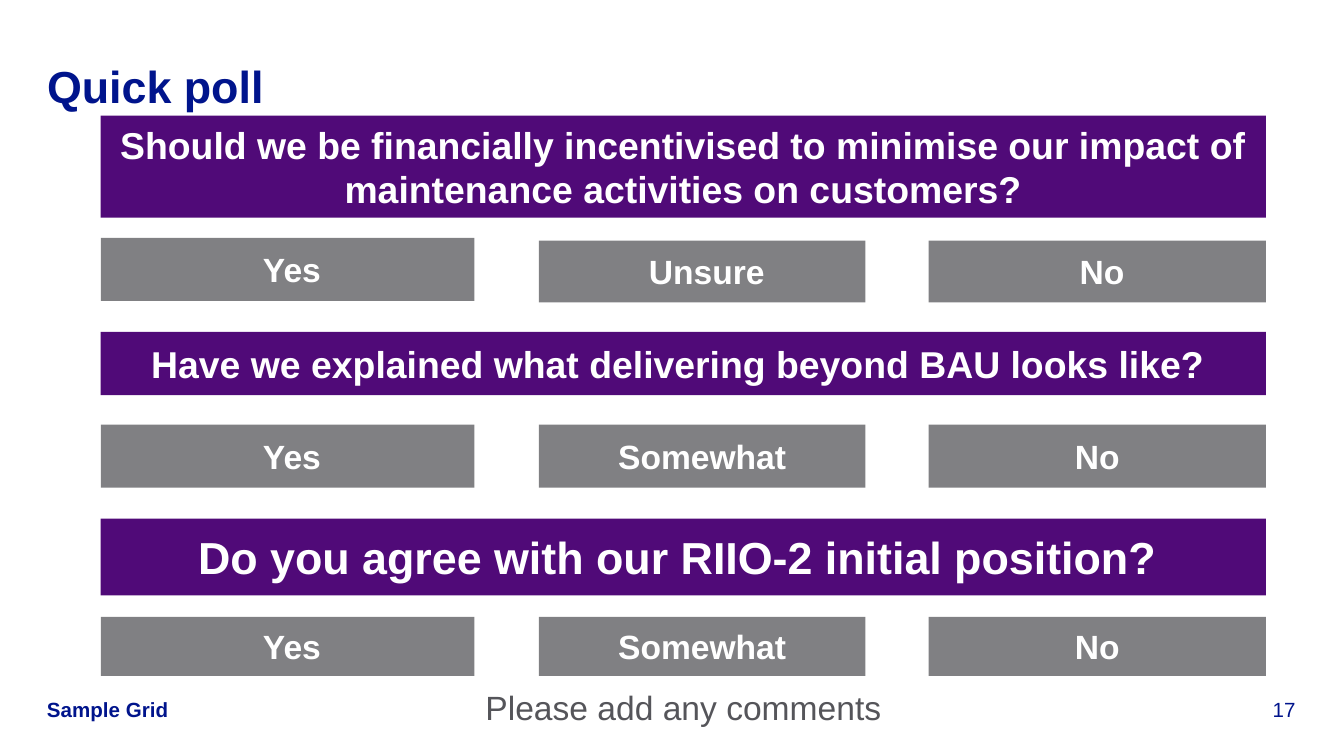
from dataclasses import dataclass

import pptx
import pptx.dml.color
import pptx.enum.shapes
import pptx.enum.text
import pptx.util
from pptx.enum.text import MSO_ANCHOR, PP_ALIGN
from pptx.util import Inches

NAVY = "00148C"
PURPLE = "500A78"
GREY = "808083"
DARK_GREY = "55555A"
WHITE = "FFFFFF"
LEFT, WIDTH = 0.75, 8.67
ANSWER_COLUMNS = ((0.75, 2.78), (4.01, 2.43), (6.91, 2.51))


@dataclass(frozen=True)
class Area:
    left: float
    top: float
    width: float
    height: float


@dataclass(frozen=True)
class Poll:
    question: str
    size: int
    top: float
    height: float
    answers: tuple[str, ...]
    answer_tops: tuple[float, ...]
    answer_heights: tuple[float, ...]


POLLS = (
    Poll("Should we be financially incentivised to minimise our impact of "
         "maintenance activities on customers?", 20, 0.86, 0.76,
         (" Yes", " Unsure", " No"), (1.77, 1.79, 1.79), (0.47, 0.46, 0.46)),
    Poll("Have we explained what delivering beyond BAU looks like? ", 20, 2.47, 0.47,
         (" Yes", "Somewhat", "No"), (3.16,) * 3, (0.47,) * 3),
    Poll("Do you agree with our RIIO-2 initial position? ", 24, 3.86, 0.57,
         (" Yes", "Somewhat", "No"), (4.59,) * 3, (0.44,) * 3),
)


def rgb(value: str) -> pptx.dml.color.RGBColor:
    return pptx.dml.color.RGBColor.from_string(value)


def write(shape, text: str, size: int, color: str, bold: bool,
          align=PP_ALIGN.CENTER, anchor=MSO_ANCHOR.MIDDLE, after: int = 6) -> None:
    frame = shape.text_frame
    frame.word_wrap = True
    frame.auto_size = pptx.enum.text.MSO_AUTO_SIZE.NONE
    frame.vertical_anchor = anchor
    frame.text = text
    para = frame.paragraphs[0]
    para.alignment = align
    para.space_after = pptx.util.Pt(after)
    para.font.name = "Arial"
    para.font.size = pptx.util.Pt(size)
    para.font.bold = bold
    para.font.color.rgb = rgb(color)


def place(shape, area: Area) -> None:
    shape.left, shape.top = Inches(area.left), Inches(area.top)
    shape.width, shape.height = Inches(area.width), Inches(area.height)


def clear_margins(shape) -> None:
    frame = shape.text_frame
    frame.margin_left = frame.margin_right = 0
    frame.margin_top = frame.margin_bottom = 0


def add_bar(page, area: Area, text: str, size: int, fill: str) -> None:
    bar = page.shapes.add_shape(pptx.enum.shapes.MSO_SHAPE.RECTANGLE, 0, 0, 0, 0)
    place(bar, area)
    bar.shadow.inherit = False
    bar.fill.solid()
    bar.fill.fore_color.rgb = rgb(fill)
    bar.line.fill.background()
    write(bar, text, size, WHITE, True)


def add_label(page, area: Area, text: str, size: int, color: str, bold: bool,
              align, anchor, after: int = 0) -> None:
    box = page.shapes.add_textbox(0, 0, 0, 0)
    place(box, area)
    clear_margins(box)
    write(box, text, size, color, bold, align, anchor, after)


def add_poll(page, poll: Poll) -> None:
    add_bar(page, Area(LEFT, poll.top, WIDTH, poll.height),
            poll.question, poll.size, PURPLE)
    for (left, width), answer, top, height in zip(
            ANSWER_COLUMNS, poll.answers, poll.answer_tops, poll.answer_heights):
        add_bar(page, Area(left, top, width, height), answer, 18, GREY)


def main() -> None:
    deck = pptx.Presentation()
    deck.slide_width = Inches(10)
    deck.slide_height = deck.slide_width * 9 // 16
    page = deck.slides.add_slide(deck.slide_layouts[5])

    title = page.shapes.title
    place(title, Area(0.35, 0.4, 9.29, 0.47))
    clear_margins(title)
    write(title, "Quick poll", 24, NAVY, True, PP_ALIGN.LEFT, after=0)

    for poll in POLLS:
        add_poll(page, poll)

    add_label(page, Area(LEFT, 5.11, WIDTH, 0.3), "Please add any comments", 18,
              DARK_GREY, False, PP_ALIGN.CENTER, MSO_ANCHOR.TOP, 6)
    add_label(page, Area(0.35, 5.18, 1.1, 0.19), "Sample Grid", 11,
              NAVY, True, PP_ALIGN.LEFT, MSO_ANCHOR.BOTTOM)
    add_label(page, Area(9.06, 5.18, 0.58, 0.19), "17", 11,
              NAVY, False, PP_ALIGN.RIGHT, MSO_ANCHOR.BOTTOM)
    deck.save("out.pptx")


if __name__ == "__main__":
    main()
